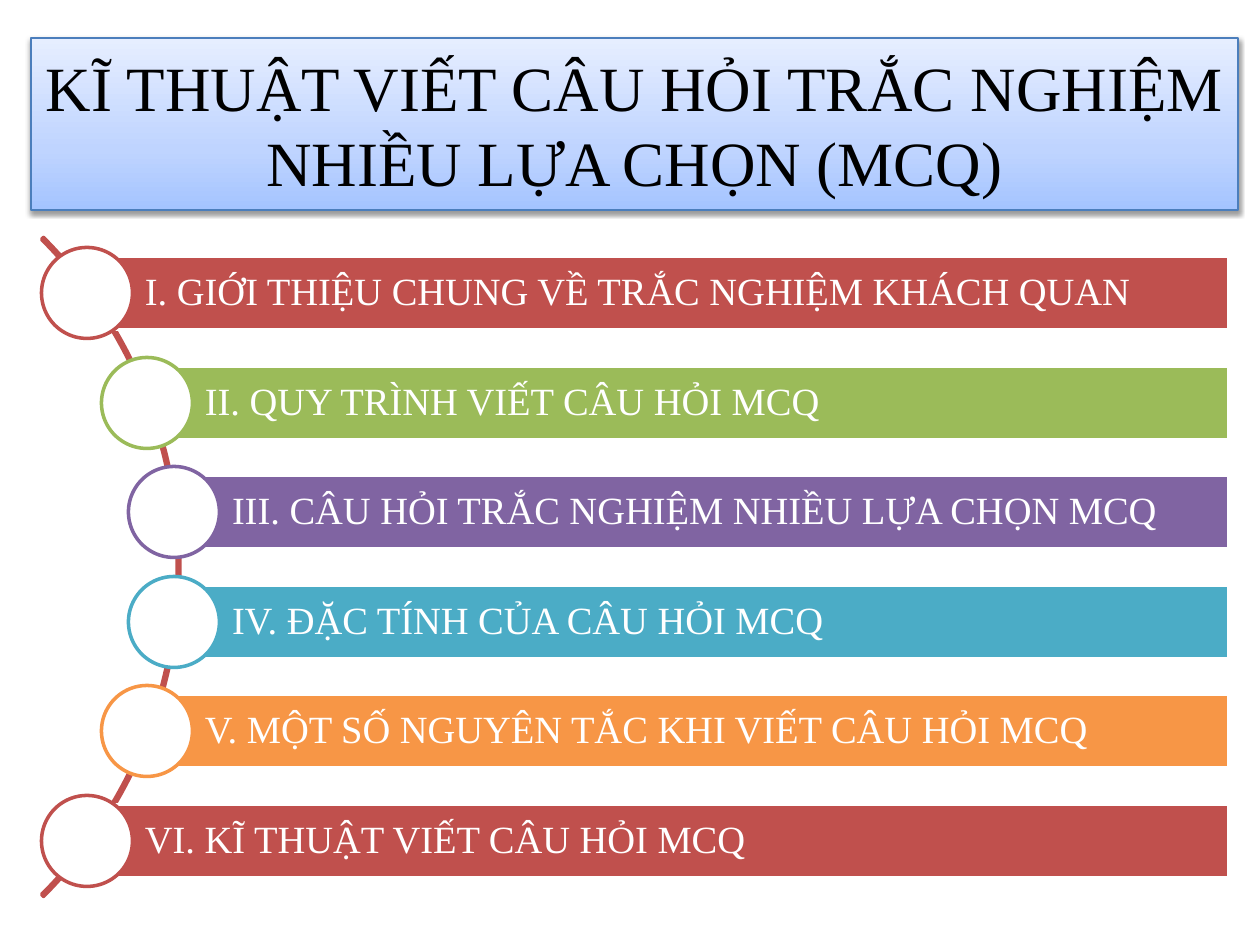
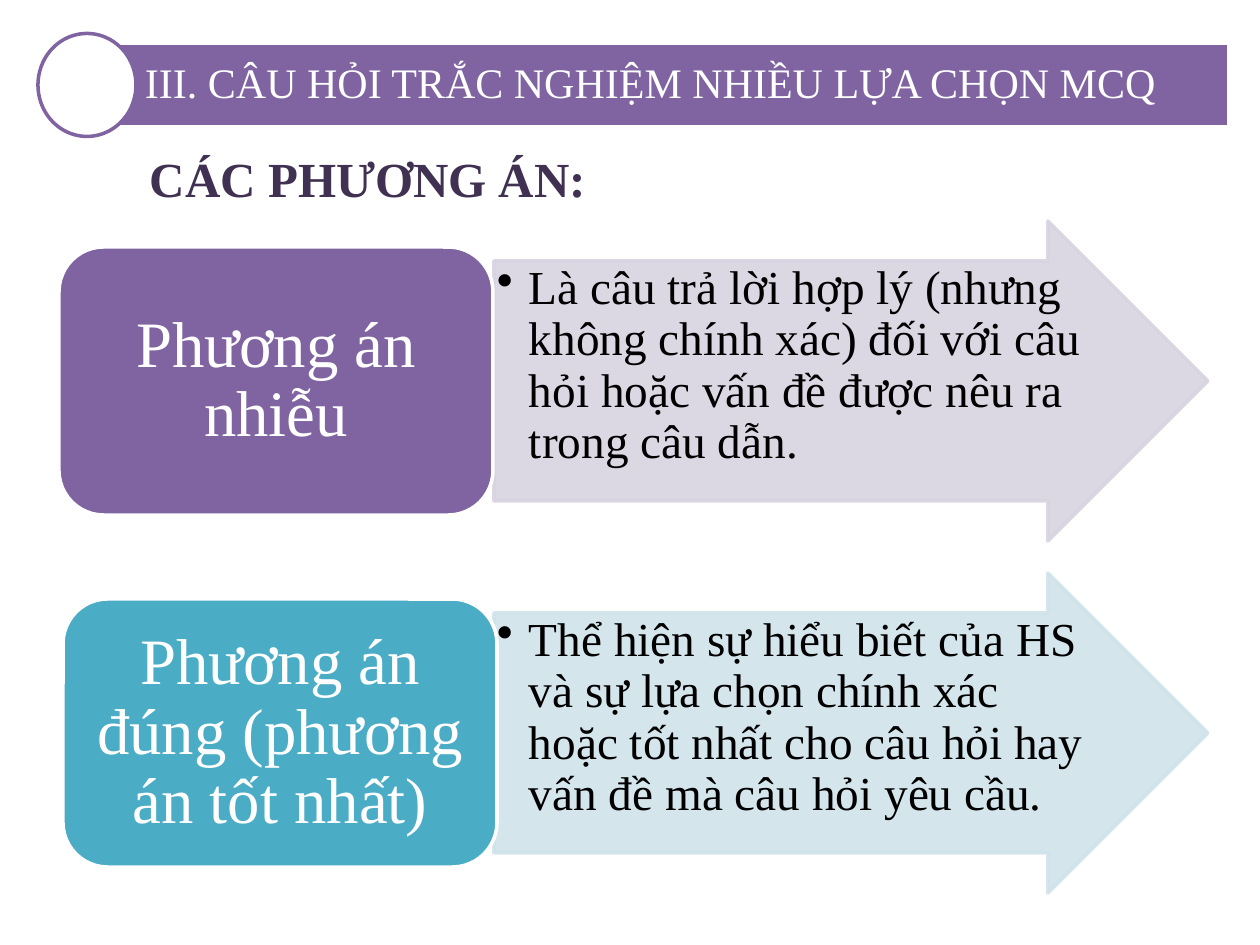
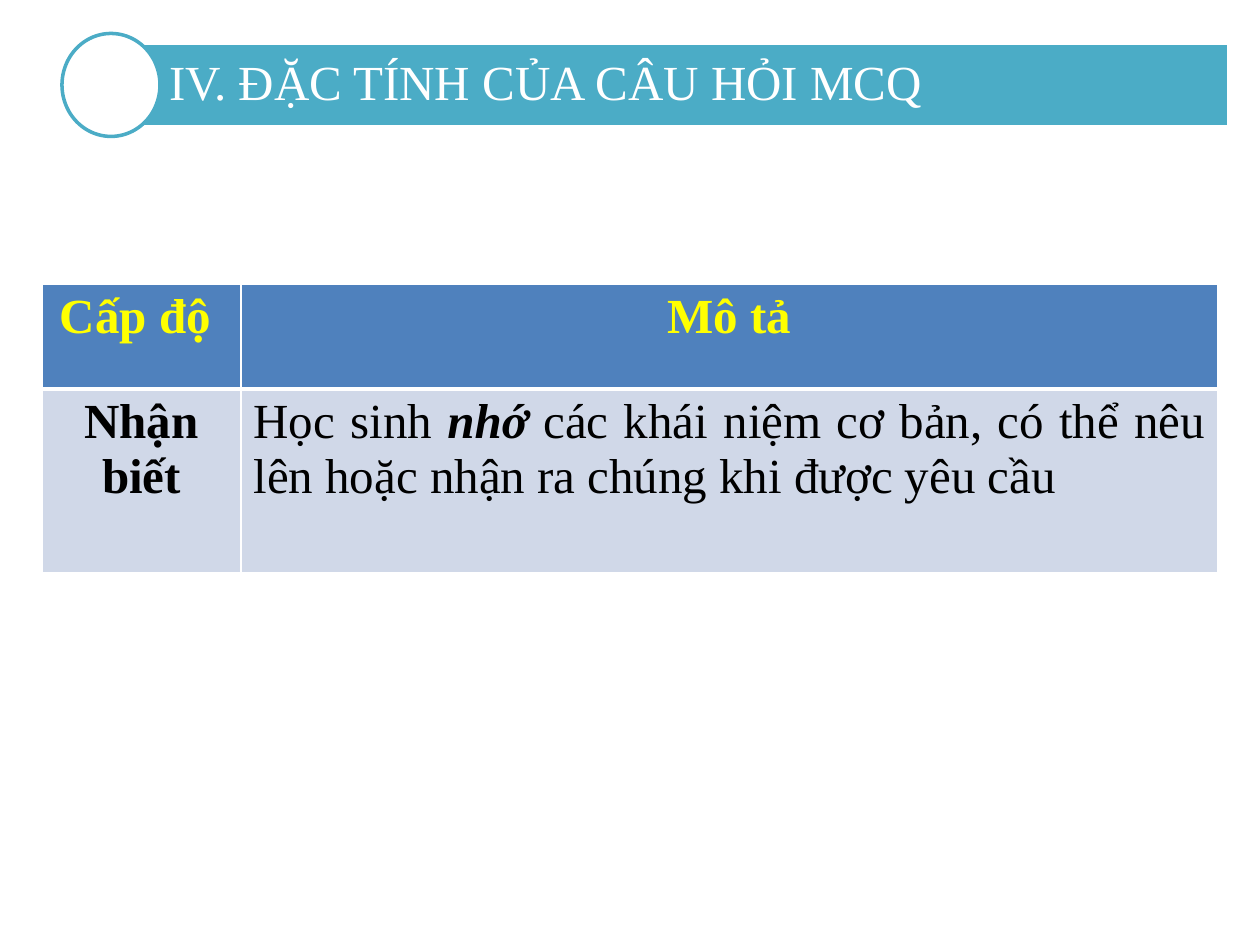
from dataclasses import dataclass
from math import sqrt

from pptx import Presentation
from pptx.dml.color import RGBColor as RGB
from pptx.enum.shapes import MSO_SHAPE as SHAPE
from pptx.enum.text import MSO_ANCHOR as ANCHOR, MSO_AUTO_SIZE as AUTO, PP_ALIGN as ALIGN
from pptx.oxml import parse_xml
from pptx.oxml.ns import nsdecls, qn
from pptx.util import Pt

SCALE = 914400 / 126
NS = nsdecls("a")


@dataclass(frozen=True)
class Theme:
    font: str = "Times New Roman"
    white: str = "FFFFFF"
    black: str = "000000"
    red: str = "C0504D"
    green: str = "9BBB59"
    purple: str = "8064A2"
    teal: str = "4BACC6"
    orange: str = "F79646"
    blue: str = "4F81BD"
    title_line: str = "4B7EBC"
    title_stops: tuple = ((0, "A4C4FF"), (35, "BFD4FF"), (100, "E6EEFF"))
    pale_purple: str = "D8D3E0"
    pale_teal: str = "D0E3EA"
    pale_blue: str = "D0D8E8"
    dark_purple: str = "403152"
    yellow: str = "FFFF00"
    title_size: int = 36
    agenda_size: int = 22
    option_size: int = 37
    detail_size: int = 27
    body_size: int = 28
    line: int = 2


def px(n):
    return round(n * SCALE)


class Deck:
    def __init__(self, theme):
        self.theme = theme
        self.prs = Presentation()
        self.prs.slide_width, self.prs.slide_height = px(1260), px(945)
        self.slide = None

    def new_slide(self):
        self.slide = self.prs.slides.add_slide(self.prs.slide_layouts[5])

    def style(self, sp, fill, line, width=None):
        sp.shadow.inherit = False
        if fill:
            sp.fill.solid()
            sp.fill.fore_color.rgb = RGB.from_string(fill)
        else:
            sp.fill.background()
        sp.line.color.rgb = RGB.from_string(line)
        sp.line.width = Pt(width or self.theme.line)

    def shape(self, kind, box, fill, line, adjust=()):
        sp = self.slide.shapes.add_shape(kind, *map(px, box))
        for i, value in enumerate(adjust):
            sp.adjustments[i] = value
        self.style(sp, fill, line)
        return sp

    def title(self, box):
        sp = self.slide.shapes.title
        sp.left, sp.top, sp.width, sp.height = map(px, box)
        return sp

    def font(self, p, size, color, align=ALIGN.LEFT, bold=False, spacing=None):
        p.alignment, p.line_spacing = align, spacing
        f = p.font
        f.name, f.size, f.bold = self.theme.font, Pt(size), bold
        f.color.rgb = RGB.from_string(color)

    def text(self, sp, text, size, color, align=ALIGN.LEFT, insets=(13, 6, 13, 6),
             anchor=ANCHOR.MIDDLE, wrap=True, bold=False, spacing=None):
        tf = sp.text_frame
        tf.auto_size, tf.word_wrap, tf.vertical_anchor = AUTO.NONE, wrap, anchor
        tf.margin_left, tf.margin_top, tf.margin_right, tf.margin_bottom = map(px, insets)
        p = tf.paragraphs[0]
        p.text = text
        self.font(p, size, color, align, bold, spacing)
        return p

    def gradient_title(self, box, text):
        t = self.theme
        sp = self.title(box)
        self.style(sp, t.white, t.title_line, 0.75)
        sp.fill.gradient()
        sp.fill.gradient_angle = 90
        spPr = sp._element.spPr
        stops = "".join(f'<a:gs pos="{pos * 1000}"><a:srgbClr val="{color}"/></a:gs>'
                        for pos, color in t.title_stops)
        old = spPr.find(".//" + qn("a:gsLst"))
        old.getparent().replace(old, parse_xml(f"<a:gsLst {NS}>{stops}</a:gsLst>"))
        spPr.find(qn("a:effectLst")).append(parse_xml(
            f'<a:outerShdw {NS} blurRad="40000" dist="20000" dir="5400000" rotWithShape="0">'
            f'<a:srgbClr val="{t.black}"><a:alpha val="38000"/></a:srgbClr></a:outerShdw>'))
        self.text(sp, text, t.title_size, t.black, ALIGN.CENTER)

    def banner(self, cx, cy, height, knob, text, size, color, is_title=False):
        t = self.theme
        box = cx, cy - height / 2, 1229 - cx, height
        if is_title:
            sp = self.title(box)
            self.style(sp, color, t.white)
        else:
            sp = self.shape(SHAPE.RECTANGLE, box, color, t.white)
        self.text(sp, text, size, t.white, insets=(58, 8, 8, 8), spacing=0.9)
        w, h = knob
        self.shape(SHAPE.OVAL, (cx - w / 2, cy - h / 2, w, h), t.white, color)

    def heading_banner(self, cx, text, size, color):
        self.banner(cx, 85, 83, (98, 103), text, size, color, True)

    def label(self, box, text, size, color):
        sp = self.slide.shapes.add_textbox(*map(px, box))
        self.text(sp, text, size, color, anchor=ANCHOR.TOP, wrap=False, bold=True)

    def arrow(self, box, text, color):
        t = self.theme
        sp = self.shape(SHAPE.RIGHT_ARROW, box, color, color, (0.75, 0.5))
        for clr in sp._element.spPr.iter(qn("a:srgbClr")):
            clr.append(parse_xml(f'<a:alpha {NS} val="90000"/>'))
        p = self.text(sp, text, t.detail_size, t.black, insets=(3, 3, 3, 3),
                      anchor=ANCHOR.TOP, spacing=0.9)
        pPr = p._p.get_or_add_pPr()
        pPr.set("marL", str(px(32)))
        pPr.set("indent", str(px(-32)))
        bullet = parse_xml(f'<a:buChar {NS} char="•"/>')
        pPr.find(qn("a:lnSpc")).addnext(bullet)

    def option(self, box, text, color):
        t = self.theme
        sp = self.shape(SHAPE.ROUNDED_RECTANGLE, box, color, t.white)
        self.text(sp, text, t.option_size, t.white, ALIGN.CENTER, (19, 10, 19, 10), spacing=0.9)

    def cell(self, cell, runs, fill, color, align, bold, top, bottom):
        t = self.theme
        cell.fill.solid()
        cell.fill.fore_color.rgb = RGB.from_string(fill)
        p = cell.text_frame.paragraphs[0]
        self.font(p, t.body_size, color, align, bold)
        for text, strong in runs:
            r = p.add_run()
            r.text = text
            if strong:
                r.font.bold = r.font.italic = True
        tcPr = cell._tc.get_or_add_tcPr()
        for i, (side, width) in enumerate(zip("LRTB", (1, 1, top, bottom))):
            tcPr.insert(i, parse_xml(
                f'<a:ln{side} {NS} w="{Pt(width)}"><a:solidFill>'
                f'<a:srgbClr val="{t.white}"/></a:solidFill></a:ln{side}>'))

    def table(self, left, top, widths, heights, header, body):
        t = self.theme
        table = self.slide.shapes.add_table(
            2, len(widths), *map(px, (left, top, sum(widths), sum(heights)))).table
        for col, width in zip(table.columns, widths):
            col.width = px(width)
        for row, height in zip(table.rows, heights):
            row.height = px(height)
        for i, text in enumerate(header):
            self.cell(table.cell(0, i), [(text, False)], t.blue, t.yellow,
                      ALIGN.CENTER, True, 1, 3)
        for i, runs in enumerate(body):
            align = ALIGN.JUSTIFY if i else ALIGN.CENTER
            self.cell(table.cell(1, i), runs, t.pale_blue, t.black, align, i == 0, 3, 1)


def agenda_slide(deck):
    t = deck.theme
    deck.new_slide()
    deck.gradient_title((31, 38, 1207, 172),
                        "KĨ THUẬT VIẾT CÂU HỎI TRẮC NGHIỆM NHIỀU LỰA CHỌN (MCQ)")
    arc_x, arc_y, radius = -286, 567, 466
    deck.shape(SHAPE.BLOCK_ARC, (arc_x - radius, arc_y - radius, 2 * radius, 2 * radius),
               None, t.red, (189, 27, 0.003))
    items = [
        ("I. GIỚI THIỆU CHUNG VỀ TRẮC NGHIỆM KHÁCH QUAN", t.red),
        ("II. QUY TRÌNH VIẾT CÂU HỎI MCQ", t.green),
        ("III. CÂU HỎI TRẮC NGHIỆM NHIỀU LỰA CHỌN MCQ", t.purple),
        ("IV. ĐẶC TÍNH CỦA CÂU HỎI MCQ", t.teal),
        ("V. MỘT SỐ NGUYÊN TẮC KHI VIẾT CÂU HỎI MCQ", t.orange),
        ("VI. KĨ THUẬT VIẾT CÂU HỎI MCQ", t.red),
    ]
    for i, (text, color) in enumerate(items):
        dy = round(547 * (i / 5 - 0.5))
        cx = arc_x + round(sqrt((radius - 3) ** 2 - dy ** 2))
        deck.banner(cx, arc_y + dy, 73, (91, 91), text, t.agenda_size, color)


def options_slide(deck):
    t = deck.theme
    deck.new_slide()
    deck.heading_banner(87, "III. CÂU HỎI TRẮC NGHIỆM NHIỀU LỰA CHỌN MCQ", 24, t.purple)
    options = [
        (59, "Phương án nhiễu", t.purple, t.pale_purple,
         "Là câu trả lời hợp lý (nhưng không chính xác) đối với câu hỏi hoặc vấn đề "
         "được nêu ra trong câu dẫn."),
        (63, "Phương án đúng (phương án tốt nhất)", t.teal, t.pale_teal,
         "Thể hiện sự hiểu biết của HS và sự lựa chọn chính xác hoặc tốt nhất cho "
         "câu hỏi hay vấn đề mà câu hỏi yêu cầu."),
    ]
    for i, (left, name, color, pale, detail) in enumerate(options):
        top = 221 + 352 * i
        deck.arrow((494, top, 714, 320), detail, pale)
        deck.option((left, top + 26, 434, 268), name, color)
    deck.label((137, 142, 466, 72), "CÁC PHƯƠNG ÁN:", t.body_size, t.dark_purple)


def levels_slide(deck):
    t = deck.theme
    deck.new_slide()
    deck.heading_banner(111, "IV. ĐẶC TÍNH CỦA CÂU HỎI MCQ", 28, t.teal)
    deck.table(42, 284, (199, 977), (105, 184), ("Cấp độ ", "Mô tả"), (
        [("Nhận biết", False)],
        [("Học sinh ", False), ("nhớ", True),
         (" các khái niệm cơ bản, có thể nêu lên hoặc nhận ra chúng khi được yêu cầu", False)],
    ))


def main():
    deck = Deck(Theme())
    agenda_slide(deck)
    options_slide(deck)
    levels_slide(deck)
    deck.prs.save("out.pptx")


if __name__ == "__main__":
    main()
